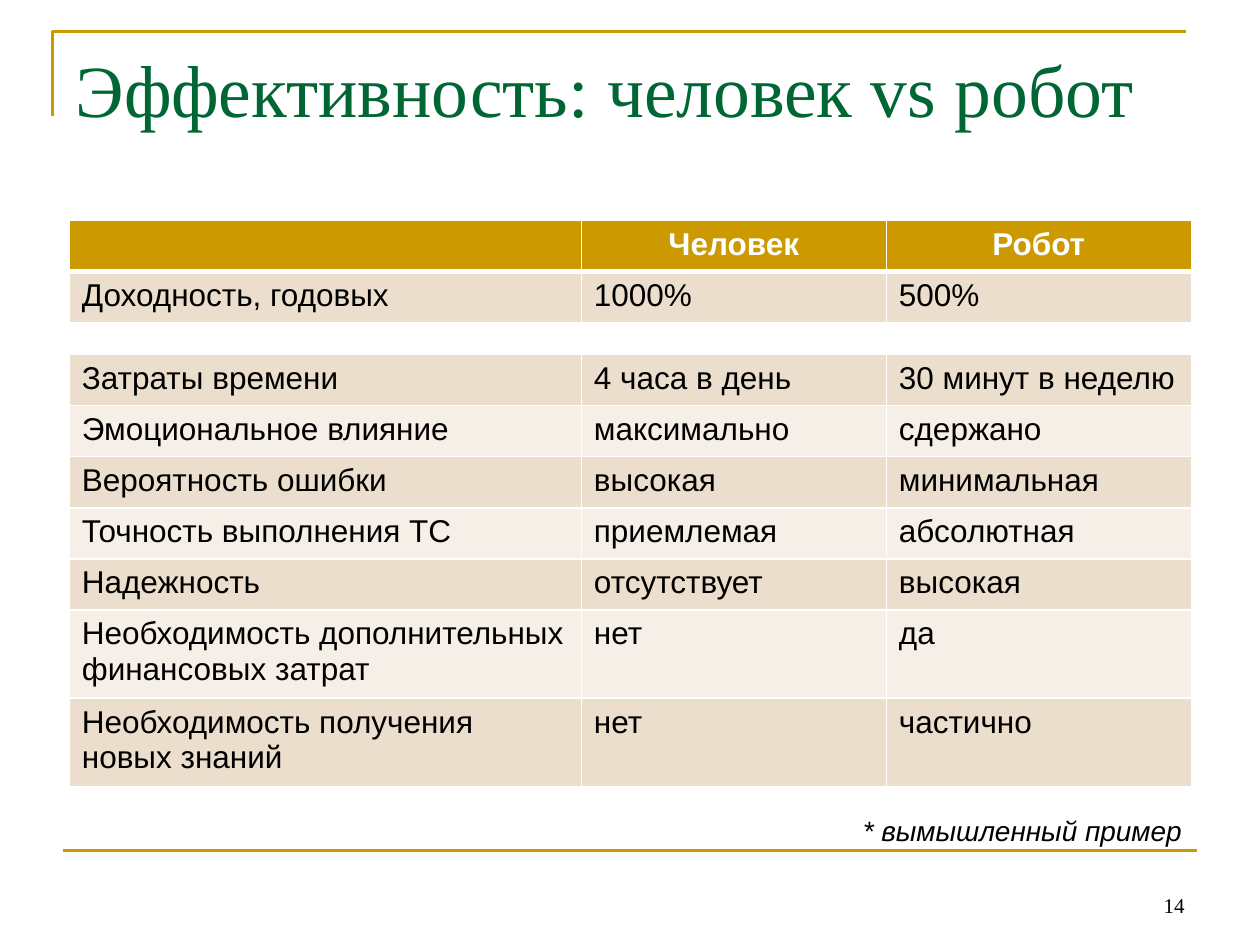
from dataclasses import dataclass
from itertools import cycle

from lxml import etree
from pptx import Presentation
from pptx.dml.color import RGBColor
from pptx.enum import shapes, text
from pptx.oxml import ns
from pptx.util import Pt


@dataclass(frozen=True)
class Theme:
    gold: str = "CC9900"
    green: str = "006633"
    black: str = "000000"
    white: str = "FFFFFF"
    bands: tuple = ("ECDECC", "F6EFE7")
    serif: str = "Times New Roman"
    sans: str = "Arial"
    title: int = 42
    body: int = 18
    note: int = 16
    page: int = 12
    rule: float = 1.5


THEME = Theme()
LEFT, COLS = 39.6, (292.6, 174.3, 174.3)
ROW, TALL = 29.2, 50.4
RIGHT = text.PP_ALIGN.RIGHT

HEAD = ("", "Человек", "Робот")
YIELD = ("Доходность, годовых", "1000%", "500%")
TRAITS = (
    ("Затраты времени", "4 часа в день", "30 минут в неделю"),
    ("Эмоциональное влияние", "максимально", "сдержано"),
    ("Вероятность ошибки", "высокая", "минимальная"),
    ("Точность выполнения ТС", "приемлемая", "абсолютная"),
    ("Надежность", "отсутствует", "высокая"),
    ("Необходимость дополнительных финансовых затрат", "нет", "да"),
    ("Необходимость получения новых знаний", "нет", "частично"),
)


def rgb(code):
    return RGBColor.from_string(code)


def style(para, face, size, color, bold=False, italic=False, align=None):
    font = para.font
    font.name, font.size, font.color.rgb = face, Pt(size), rgb(color)
    font.bold, font.italic = bold, italic
    para.alignment = align


def ink(shape):
    shape.line.color.rgb = rgb(THEME.gold)
    shape.line.width = Pt(THEME.rule)


def add_frame(slide):
    # Corner above the title
    pen = slide.shapes.build_freeform(Pt(30), Pt(66.5))
    pen.add_line_segments([(Pt(30), Pt(18)), (Pt(678), Pt(18))], close=False)
    corner = pen.convert_to_shape()
    corner.fill.background()
    corner.shadow.inherit = False
    ink(corner)
    # Rule above the page number
    rule = slide.shapes.add_connector(
        shapes.MSO_CONNECTOR.STRAIGHT, Pt(36), Pt(486), Pt(684), Pt(486))
    ink(rule)
    etree.SubElement(rule._element.spPr, ns.qn("a:effectLst"))


def add_title(slide, words):
    title = slide.shapes.title
    title.left, title.top, title.width, title.height = (
        Pt(36), Pt(21.6), Pt(648), Pt(90))
    frame = title.text_frame
    frame.text = words
    frame.auto_size = text.MSO_AUTO_SIZE.NONE
    frame.vertical_anchor = text.MSO_ANCHOR.TOP
    style(frame.paragraphs[0], THEME.serif, THEME.title, THEME.green,
          align=text.PP_ALIGN.LEFT)


def add_label(slide, words, box, face, size, italic=False, wrap=True,
              anchor=text.MSO_ANCHOR.TOP):
    frame = slide.shapes.add_textbox(*map(Pt, box)).text_frame
    frame.text = words
    frame.word_wrap = wrap
    frame.vertical_anchor = anchor
    style(frame.paragraphs[0], face, size, THEME.black, italic=italic,
          align=RIGHT)


def set_edges(cell, top=1, bottom=1):
    props = cell._tc.get_or_add_tcPr()
    widths = {"a:lnL": 1, "a:lnR": 1, "a:lnT": top, "a:lnB": bottom}
    for place, (tag, width) in enumerate(widths.items()):
        edge = etree.Element(ns.qn(tag), w=str(Pt(width)))
        fill = etree.SubElement(edge, ns.qn("a:solidFill"))
        etree.SubElement(fill, ns.qn("a:srgbClr"), val=THEME.white)
        props.insert(place, edge)


def add_grid(slide, top, rows, heights, head=False):
    grid = slide.shapes.add_table(
        len(rows), len(COLS), Pt(LEFT), Pt(top),
        Pt(sum(COLS)), Pt(sum(heights))).table
    grid.first_row = head
    for col, width in zip(grid.columns, COLS):
        col.width = Pt(width)
    bands = cycle(THEME.bands)
    for r, (row, words, height) in enumerate(zip(grid.rows, rows, heights)):
        row.height = Pt(height)
        first = head and r == 0
        fill = THEME.gold if first else next(bands)
        color = THEME.white if first else THEME.black
        align = text.PP_ALIGN.CENTER if first else text.PP_ALIGN.LEFT
        for cell, word in zip(row.cells, words):
            cell.text = word
            cell.fill.solid()
            cell.fill.fore_color.rgb = rgb(fill)
            style(cell.text_frame.paragraphs[0], THEME.sans, THEME.body,
                  color, bold=first, align=align)
            set_edges(cell, top=3 if head and r == 1 else 1,
                      bottom=3 if first else 1)


def main():
    deck = Presentation()
    deck.slide_width, deck.slide_height = Pt(720), Pt(540)
    slide = deck.slides.add_slide(deck.slide_layouts[5])

    # Frame and title
    add_frame(slide)
    add_title(slide, "Эффективность: человек vs робот")

    # Comparison tables
    add_grid(slide, 126, (HEAD, YIELD), [ROW] * 2, head=True)
    add_grid(slide, 202.6, TRAITS, [ROW] * 5 + [TALL] * 2)

    # Footnote and page number
    add_label(slide, "* вымышленный пример", (483.8, 461.5, 198.7, 26.6),
              THEME.sans, THEME.note, italic=True, wrap=False)
    add_label(slide, "14", (516, 492, 168, 36), THEME.serif, THEME.page,
              anchor=text.MSO_ANCHOR.BOTTOM)

    deck.save("out.pptx")


if __name__ == "__main__":
    main()
